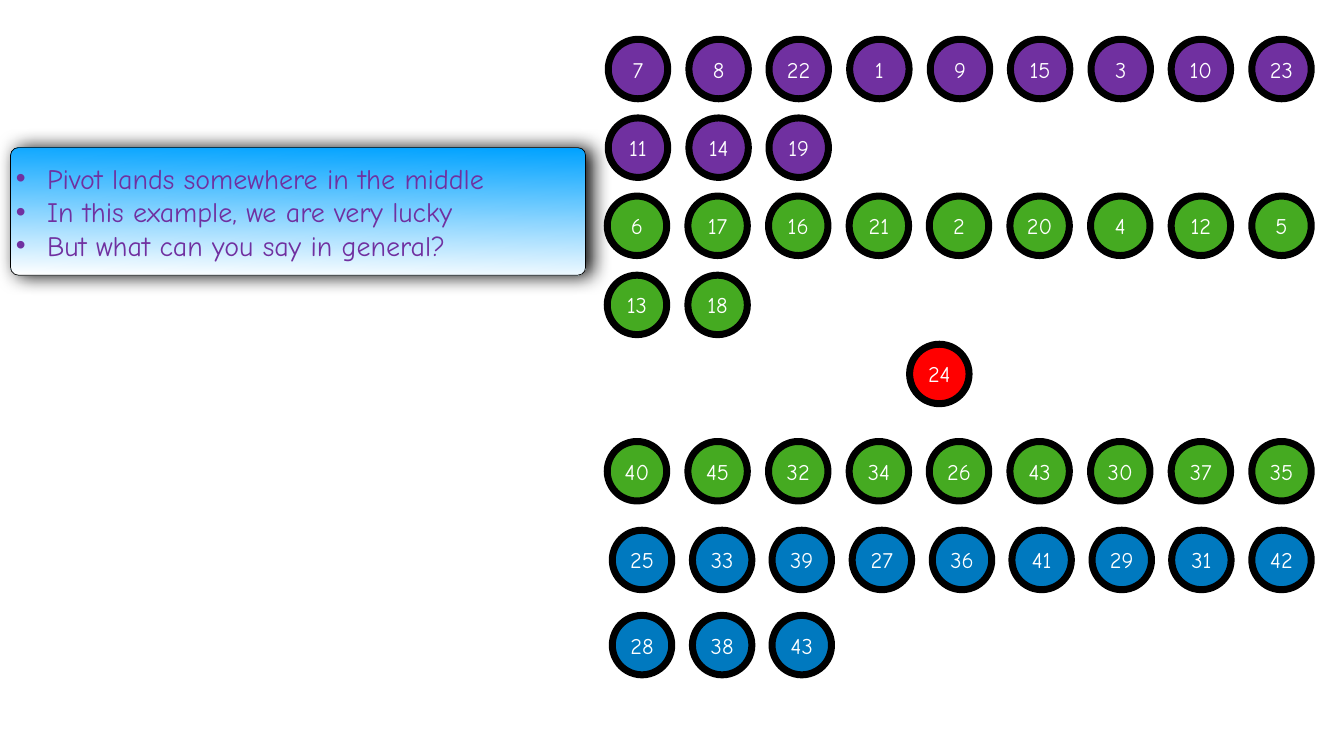
from lxml.etree import SubElement
from pptx import Presentation
from pptx.dml.color import RGBColor
from pptx.enum.shapes import MSO_SHAPE as Shape
from pptx.enum.text import MSO_ANCHOR as Anchor, MSO_AUTO_SIZE as AutoSize, PP_ALIGN as Align
from pptx.oxml.ns import qn
from pptx.util import Emu, Pt

PX = 9144
COLORS = {
    "purple": "7030A0",
    "green": "45AA21",
    "red": "FF0000",
    "blue": "0079BF",
    "sky": "00A2FF",
    "white": "FFFFFF",
    "black": "000000",
}
LAST_LEFT = 2484
LAST_COLUMN = 8
NUMBER_ROWS = [
    ("purple", 1207, 78, [7, 8, 22, 1, 9, 15, 3, 10, 23]),
    ("purple", 1207, 234, [11, 14, 19]),
    ("green", 1205, 389, [6, 17, 16, 21, 2, 20, 4, 12, 5]),
    ("green", 1205, 546, [13, 18]),
    ("red", 1805, 683, [24]),
    ("green", 1205, 876, [40, 45, 32, 34, 26, 43, 30, 37, 35]),
    ("blue", 1215, 1052, [25, 33, 39, 27, 36, 41, 29, 31, 42]),
    ("blue", 1215, 1221, [28, 38, 43]),
]
REMARKS = [
    "Pivot lands somewhere in the middle",
    "In this example, we are very lucky",
    "But what can you say in general?",
]


def px(value):
    return Emu(value * PX)


def color(name):
    return RGBColor.from_string(COLORS[name])


class SlideBuilder:
    font_name = "Comic Neue"
    inset = 6
    circle_size = 118

    def __init__(self, slide):
        self.slide = slide

    def shape(self, kind, left, top, width, height, line_width):
        shape = self.slide.shapes.add_shape(kind, px(left), px(top), px(width), px(height))
        shape.shadow.inherit = False
        shape.line.color.rgb = color("black")
        shape.line.width = Pt(line_width)
        return shape

    def text(self, shape, text, size, color_name, align):
        frame = shape.text_frame
        frame.text = text
        frame.word_wrap = True
        frame.vertical_anchor = Anchor.MIDDLE
        frame.margin_left = frame.margin_right = px(self.inset)
        frame.margin_top = frame.margin_bottom = px(self.inset)
        for paragraph in frame.paragraphs:
            paragraph.alignment = align
            for run in paragraph.runs:
                run.font.name = self.font_name
                run.font.size = Pt(size)
                run.font.color.rgb = color(color_name)
        return frame

    def circle(self, left, top, number, fill):
        shape = self.shape(Shape.OVAL, left, top, self.circle_size, self.circle_size, 10)
        shape.fill.solid()
        shape.fill.fore_color.rgb = color(fill)
        frame = self.text(shape, str(number), 32, "white", Align.CENTER)
        frame.auto_size = AutoSize.SHAPE_TO_FIT_TEXT

    def circle_row(self, fill, left, top, numbers):
        pitch = (LAST_LEFT - left) / LAST_COLUMN
        for column, number in enumerate(numbers):
            self.circle(round(left + column * pitch), top, number, fill)

    def remark_box(self, left, top, width, height, lines):
        shape = self.shape(Shape.ROUNDED_RECTANGLE, left, top, width, height, 1)
        shape.adjustments[0] = 0.06
        shape.fill.gradient()
        shape.fill.gradient_angle = 269
        for stop, name in zip(shape.fill.gradient_stops, ("sky", "white")):
            stop.color.rgb = color(name)
        self.shadow(shape, 28, 9)
        frame = self.text(shape, "\n".join(lines), 40, "purple", Align.LEFT)
        for paragraph in frame.paragraphs:
            self.bullet(paragraph, 62)

    def shadow(self, shape, blur, distance):
        effects = shape.element.spPr.find(qn("a:effectLst"))
        outer = SubElement(effects, qn("a:outerShdw"), blurRad=str(Pt(blur)),
                           dist=str(Pt(distance)), dir="0", rotWithShape="0")
        shade = SubElement(outer, qn("a:srgbClr"), val=COLORS["black"])
        SubElement(shade, qn("a:alpha"), val="97000")

    def bullet(self, paragraph, indent):
        properties = paragraph._p.get_or_add_pPr()
        properties.set("marL", str(px(indent)))
        properties.set("indent", str(-px(indent)))
        SubElement(properties, qn("a:buFont"), typeface="Arial")
        SubElement(properties, qn("a:buChar"), char="•")


def main():
    presentation = Presentation()
    presentation.slide_width = px(2667)
    presentation.slide_height = px(1500)
    builder = SlideBuilder(presentation.slides.add_slide(presentation.slide_layouts[6]))
    for row in NUMBER_ROWS:
        builder.circle_row(*row)
    builder.remark_box(21, 293, 1141, 253, REMARKS)
    presentation.save("out.pptx")


if __name__ == "__main__":
    main()
